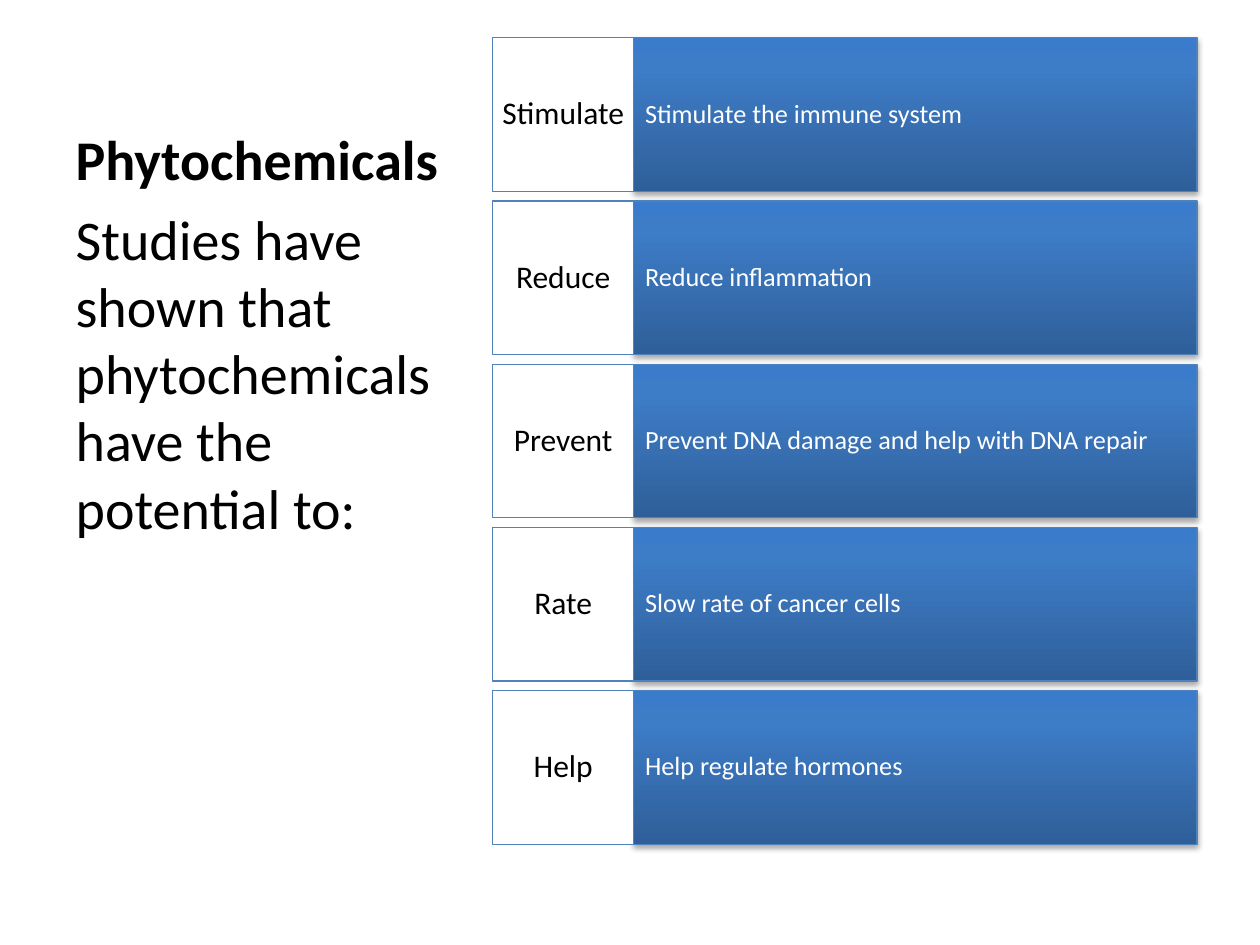
from copy import deepcopy

from pptx import Presentation
from pptx.dml.color import RGBColor
from pptx.enum.shapes import MSO_SHAPE
from pptx.enum.text import MSO_ANCHOR, PP_ALIGN
from pptx.oxml import parse_xml
from pptx.oxml.ns import nsdecls, qn
from pptx.util import Inches, Pt

RECT = MSO_SHAPE.RECTANGLE
MIDDLE, BOTTOM = MSO_ANCHOR.MIDDLE, MSO_ANCHOR.BOTTOM
LEFT, CENTER = PP_ALIGN.LEFT, PP_ALIGN.CENTER
FONT = "Calibri"
COLORS = {
    "text": "000000",
    "white": "FFFFFF",
    "line": "4F81BD",
    "dark": "2F5F99",
    "mid": "3D7CC7",
    "bright": "3A7CCB",
}
GRADIENT = [(0, "dark"), (0.8, "mid"), (1, "bright")]
SHADOW = (
    f'<a:outerShdw {nsdecls("a")} blurRad="40000" dist="23000" dir="5400000" '
    'rotWithShape="0"><a:srgbClr val="000000"><a:alpha val="35000"/>'
    "</a:srgbClr></a:outerShdw>"
)
ROWS = [
    ("Stimulate", "Stimulate the immune system"),
    ("Reduce", "Reduce inflammation"),
    ("Prevent", "Prevent DNA damage and help with DNA repair"),
    ("Rate", "Slow rate of cancer cells"),
    ("Help", "Help regulate hormones"),
]
TOP, ROW_H, PITCH = 0.3, 1.22, 1.295
LABEL_X, LABEL_W, BAR_W = 3.91, 1.12, 4.47


def add_run(p, text, size, color, bold=False):
    r = p.add_run()
    r.text = text
    r.font.name = FONT
    r.font.size = Pt(size)
    r.font.bold = bold
    r.font.color.rgb = RGBColor.from_string(COLORS[color])


def add_box(shapes, x, y, w, text, size, color, align, inset_x, inset_y):
    sp = shapes.add_shape(RECT, Inches(x), Inches(y), Inches(w), Inches(ROW_H))
    sp.shadow.inherit = False
    sp.line.color.rgb = RGBColor.from_string(COLORS["line"])
    sp.line.width = Pt(0.75)
    tf = sp.text_frame
    tf.word_wrap = True
    tf.vertical_anchor = MIDDLE
    tf.margin_left = tf.margin_right = Inches(inset_x)
    tf.margin_top = tf.margin_bottom = Inches(inset_y)
    p = tf.paragraphs[0]
    p.alignment = align
    p.line_spacing = 0.9
    p.space_after = Pt(size * 0.35)
    add_run(p, text, size, color)
    return sp


prs = Presentation()
prs.slide_width, prs.slide_height = Inches(10), Inches(7.5)
s = prs.slides.add_slide(prs.slide_layouts[7])

title, content, body = s.placeholders
content._element.getparent().remove(content._element)

title.left, title.top = Inches(0.5), Inches(0.3)
title.width, title.height = Inches(3.29), Inches(1.27)
title.text_frame.vertical_anchor = BOTTOM
p = title.text_frame.paragraphs[0]
p.alignment = LEFT
add_run(p, "Phytochemicals", 32, "text", bold=True)

body.left, body.top = Inches(0.5), Inches(1.57)
body.width, body.height = Inches(3.29), Inches(5.13)
p = body.text_frame.paragraphs[0]
add_run(p, "Studies have shown that phytochemicals have the potential to:", 32, "text")

group = s.shapes.add_group_shape()
for i, (label, detail) in enumerate(ROWS):
    y = TOP + i * PITCH

    bar = add_box(group.shapes, LABEL_X + LABEL_W, y, BAR_W, detail, 15, "white", LEFT, 0.09, 0.31)
    bar.fill.gradient()
    bar.fill.gradient_angle = 90
    stops = bar._element.spPr.find(".//" + qn("a:gsLst"))
    stops.insert(1, deepcopy(stops[0]))
    for stop, (position, color) in zip(bar.fill.gradient_stops, GRADIENT):
        stop.position = position
        stop.color.rgb = RGBColor.from_string(COLORS[color])
    bar._element.spPr.find(qn("a:effectLst")).append(parse_xml(SHADOW))

    box = add_box(group.shapes, LABEL_X, y, LABEL_W, label, 18, "text", CENTER, 0.06, 0.12)
    box.fill.solid()
    box.fill.fore_color.rgb = RGBColor.from_string(COLORS["white"])

prs.save("out.pptx")
